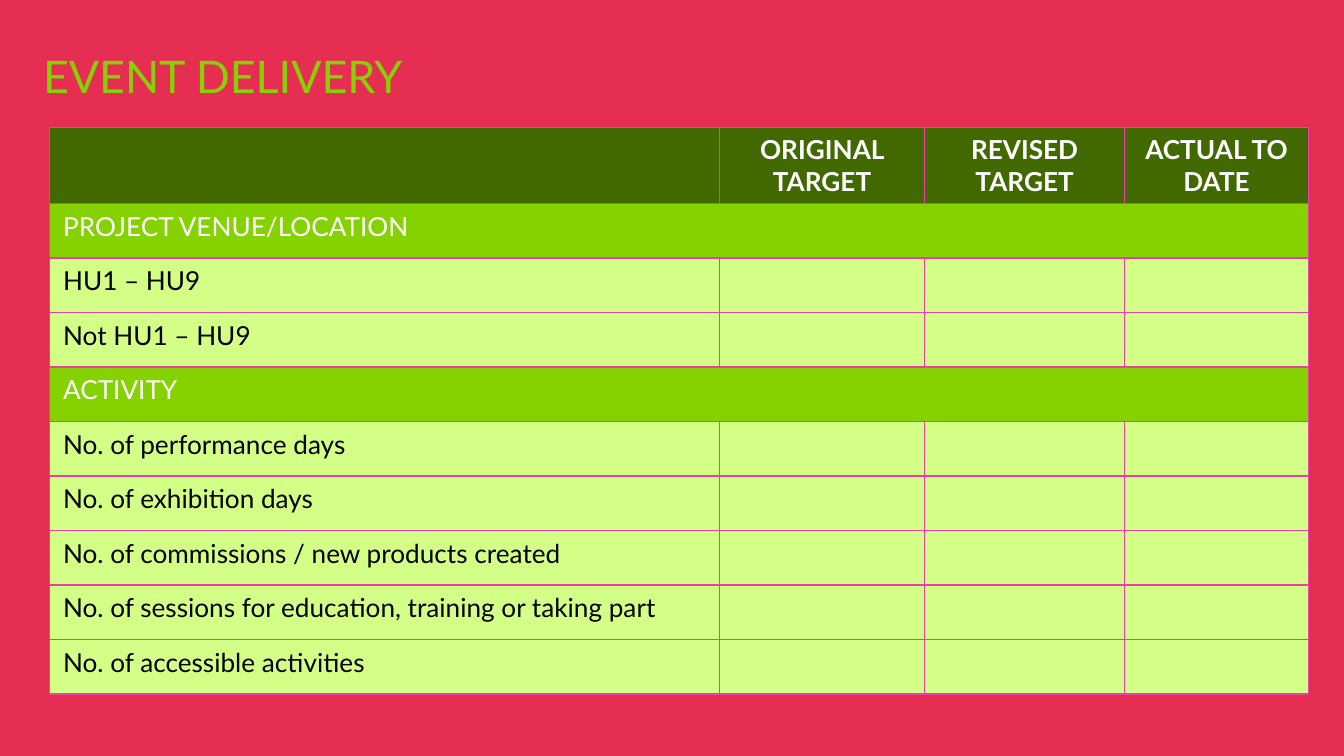
from lxml import etree
from pptx import Presentation
from pptx import util as u
from pptx.dml.color import RGBColor
from pptx.enum import shapes, text
from pptx.oxml import ns

RED = RGBColor(0xE6, 0x2E, 0x52)
PINK = RGBColor(0xEB, 0x3E, 0xA8)
DARK = RGBColor(0x42, 0x69, 0x00)
GREEN = RGBColor(0x85, 0xD2, 0x00)
PALE = RGBColor(0xD3, 0xFF, 0x87)
WHITE = RGBColor(0xFF, 0xFF, 0xFF)
BLACK = RGBColor(0x00, 0x00, 0x00)

WIDTH, HEIGHT = 720, 405
COLS = [358.8, 110, 107.1, 98.6]
HEAD, ROW = 40.8, 29.2
TITLES = ["", "ORIGINAL TARGET", "REVISED TARGET", "ACTUAL TO DATE"]
GROUPS = {
    "PROJECT VENUE/LOCATION": ["HU1 – HU9", "Not HU1 – HU9"],
    "ACTIVITY": [
        "No. of performance days",
        "No. of exhibition days",
        "No. of commissions / new products created",
        "No. of sessions for education, training or taking part",
        "No. of accessible activities",
    ],
}


class Deck:
    face = "Lato"
    size = 14

    def __init__(self, slide):
        self.slide = slide

    def words(self, frame, words, color, size=size, bold=False, align=text.PP_ALIGN.LEFT):
        para = frame.paragraphs[0]
        para.text = words
        para.alignment = align
        font = para.font
        font.name, font.size, font.bold = self.face, u.Pt(size), bold
        font.color.rgb = color

    def panel(self, left, top, width, height, color):
        box = self.slide.shapes.add_shape(
            shapes.MSO_SHAPE.RECTANGLE, *map(u.Pt, (left, top, width, height)))
        box.shadow.inherit = False
        box.fill.solid()
        box.fill.fore_color.rgb = color
        box.line.fill.background()

    def label(self, left, top, width, height, words, color, size):
        box = self.slide.shapes.add_textbox(*map(u.Pt, (left, top, width, height)))
        box.text_frame.word_wrap = True
        self.words(box.text_frame, words, color, size)

    def border(self, cell, color, width):
        props = cell._tc.get_or_add_tcPr()
        for side in ("lnL", "lnR", "lnT", "lnB"):
            line = etree.SubElement(props, ns.qn("a:" + side), w=str(u.Pt(width)))
            fill = etree.SubElement(line, ns.qn("a:solidFill"))
            etree.SubElement(fill, ns.qn("a:srgbClr"), val=str(color))

    def cell(self, cell, words, fill, color, **style):
        self.border(cell, PINK, 0.75)
        cell.fill.solid()
        cell.fill.fore_color.rgb = fill
        self.words(cell.text_frame, words, color, **style)

    def table(self, left, top, cols, titles, groups):
        rows = [(titles, DARK, WHITE)]
        for name, items in groups.items():
            rows.append(([name], GREEN, WHITE))
            rows += [([item], PALE, BLACK) for item in items]
        high = HEAD + ROW * (len(rows) - 1)
        grid = self.slide.shapes.add_table(
            len(rows), len(cols), *map(u.Pt, (left, top, sum(cols), high))).table
        for col, width in zip(grid.columns, cols):
            col.width = u.Pt(width)
        for r, (words, fill, color) in enumerate(rows):
            first = r == 0
            grid.rows[r].height = u.Pt(HEAD if first else ROW)
            align = text.PP_ALIGN.CENTER if first else text.PP_ALIGN.LEFT
            for c in range(len(cols)):
                word = words[c] if c < len(words) else ""
                self.cell(grid.cell(r, c), word, fill, color, bold=first, align=align)
            if fill == GREEN:
                grid.cell(r, 0).merge(grid.cell(r, len(cols) - 1))


def main():
    show = Presentation()
    show.slide_width, show.slide_height = u.Pt(WIDTH), u.Pt(HEIGHT)
    deck = Deck(show.slides.add_slide(show.slide_layouts[6]))
    deck.panel(0, 0, WIDTH, HEIGHT, RED)
    deck.label(16, 22.5, 515, 36, "EVENT DELIVERY", GREEN, 24)
    deck.table(26.6, 68.2, COLS, TITLES, GROUPS)
    show.save("out.pptx")


if __name__ == "__main__":
    main()
